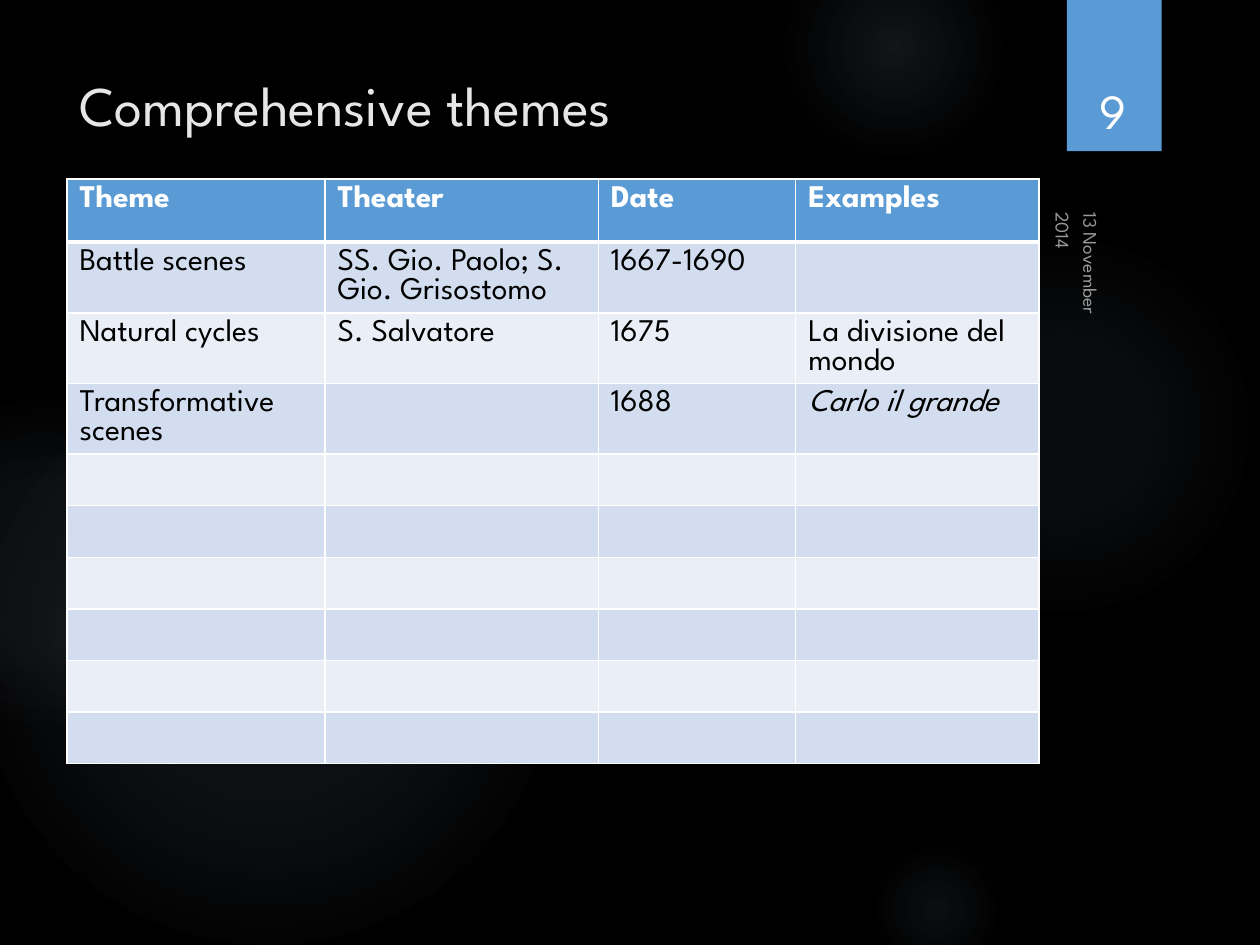
from lxml.etree import SubElement
from pptx import Presentation
from pptx.dml.color import RGBColor
from pptx.enum.shapes import MSO_SHAPE as Shape
from pptx.enum.text import MSO_ANCHOR as Anchor, PP_ALIGN as Align
from pptx.oxml import parse_xml
from pptx.oxml.ns import nsdecls, qn
from pptx.util import Cm, Pt

FONT = "League Spartan"
BLUE, WHITE, BLACK = "5B9BD5", "FFFFFF", "000000"
BANDS = ["D2DEEF", "EAEFF7"]


def paint(target, color):
    """Give a fill or line format one solid colour."""
    target.solid()
    target.fore_color.rgb = RGBColor.from_string(color)


def set_font(paragraph, size, color):
    font = paragraph.font
    font.name, font.size = FONT, Pt(size)
    paint(font.fill, color)
    return font


prs = Presentation()
prs.slide_width, prs.slide_height = Cm(25.4), Cm(19.05)
slide = prs.slides.add_slide(prs.slide_layouts[5])
paint(slide.background.fill, BLACK)
shapes = slide.shapes

# Glowing discs: left, top, diameter, then (position, opacity) stops in percent
glows = [
    (17.5, 4.65, 7.82, [(0, 7), (36, 6), (69, 0)]),
    (15.8, -1.27, 4.45, [(0, 14), (36, 7), (73, 0)]),
    (17.5, 16.94, 2.74, [(0, 9), (36, 5), (66, 0)]),
    (-0.43, 7.42, 11.63, [(0, 11), (36, 10), (75, 0)]),
    (-2.34, 8.05, 6.55, [(0, 8), (36, 8), (72, 0)]),
]
for left, top, diameter, stops in glows:
    glow = shapes.add_shape(Shape.OVAL, Cm(left), Cm(top), Cm(diameter), Cm(diameter))
    glow.shadow.inherit = False
    glow.line.fill.background()
    stop_xml = "".join(
        f'<a:gs pos="{pos * 1000}"><a:srgbClr val="8497B0">'
        f'<a:alpha val="{opacity * 1000}"/></a:srgbClr></a:gs>'
        for pos, opacity in stops
    )
    gradient = parse_xml(
        f'<a:gradFill {nsdecls("a")} rotWithShape="1"><a:gsLst>{stop_xml}</a:gsLst>'
        '<a:path path="circle"><a:fillToRect l="50000" t="50000" r="50000" b="50000"/>'
        "</a:path></a:gradFill>"
    )
    glow._element.spPr.find(qn("a:prstGeom")).addnext(gradient)

number_tab = shapes.add_shape(Shape.RECTANGLE, Cm(21.51), 0, Cm(1.91), Cm(3.05))
number_tab.shadow.inherit = False
paint(number_tab.fill, BLUE)
number_tab.line.fill.background()

# Title, brought in front of the discs
title = shapes.title
title.left, title.top, title.width, title.height = Cm(1.35), Cm(1.27), Cm(19.61), Cm(1.7)
title.text_frame.text = "Comprehensive themes"
title.text_frame.vertical_anchor = Anchor.BOTTOM
title.text_frame.margin_bottom = Cm(0.2)
title.text_frame.paragraphs[0].alignment = Align.LEFT
set_font(title.text_frame.paragraphs[0], 32, "E7E6E6")
shapes._spTree.append(title._element)

# Table of themes
headings = ["Theme", "Theater", "Date", "Examples"]
themes = [
    ["Battle scenes", "SS. Gio. Paolo; S. Gio. Grisostomo", "1667-1690", ""],
    ["Natural cycles", "S. Salvatore", "1675", "La divisione del mondo"],
    ["Transformative scenes", "", "1688", "Carlo il grande"],
]
empty_rows = [[""] * len(headings)] * 6
rows = [headings] + themes + empty_rows
table = shapes.add_table(
    len(rows), len(headings), Cm(1.35), Cm(3.61), Cm(19.61), Cm(10.62)
).table
for column, width in zip(table.columns, [5.2, 5.51, 3.98, 4.9]):
    column.width = Cm(width)

for r, row in enumerate(rows):
    table.rows[r].height = Cm(1.04 if r else 1.27)
    for c, text in enumerate(row):
        cell = table.cell(r, c)
        cell.text = text
        font = set_font(cell.text_frame.paragraphs[0], 18, BLACK if r else WHITE)
        font.bold = r == 0
        font.italic = text == "Carlo il grande"
        cell_props = cell._tc.get_or_add_tcPr()
        for side in ("lnL", "lnR", "lnT", "lnB"):
            under_header = (r, side) in [(0, "lnB"), (1, "lnT")]
            border = SubElement(cell_props, qn(f"a:{side}"), w=str(Pt(3 if under_header else 1)))
            fill = SubElement(border, qn("a:solidFill"))
            SubElement(fill, qn("a:srgbClr"), val=WHITE)
        paint(cell.fill, BANDS[(r - 1) % 2] if r else BLUE)

# Date, running down the right edge
date = shapes.add_textbox(Cm(20.83), Cm(5.08), Cm(2.74), Cm(0.64))
date.rotation = 90
date.text_frame.word_wrap = True
date.text_frame.margin_top = Cm(0.2)
date.text_frame.text = "13 November 2014"
date_line = date.text_frame.paragraphs[0]
date_line.line_spacing = 1.2
set_font(date_line, 11, WHITE)
for color in date_line._p.iter(qn("a:srgbClr")):
    SubElement(color, qn("a:alpha"), val="60000")

page_number = shapes.add_textbox(Cm(21.56), Cm(0.81), Cm(1.75), Cm(2.13))
page_number.text_frame.word_wrap = True
page_number.text_frame.vertical_anchor = Anchor.BOTTOM
page_number.text_frame.text = "9"
page_number.text_frame.paragraphs[0].alignment = Align.CENTER
set_font(page_number.text_frame.paragraphs[0], 28, WHITE)

prs.save("out.pptx")
